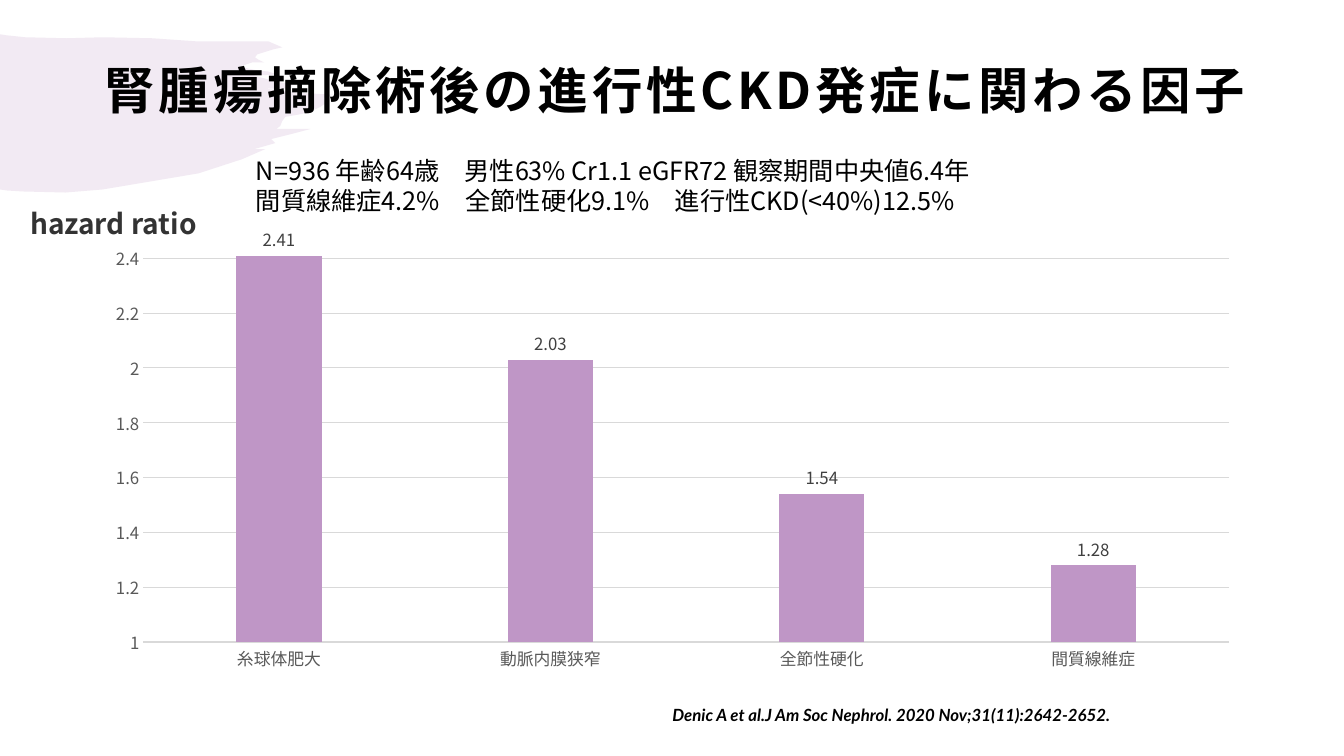
import dataclasses

import pptx
import pptx.chart.data
import pptx.dml.color
import pptx.enum.chart
import pptx.enum.text
import pptx.oxml
import pptx.oxml.ns
import pptx.util
from lxml import etree

Inches = pptx.util.Inches
Pt = pptx.util.Pt


@dataclasses.dataclass(frozen=True)
class Theme:
    """Colours, fonts and type sizes of the slide."""
    ink: str = "000000"
    heading: str = "333333"
    label: str = "404040"
    axis: str = "595959"
    grid: str = "D9D9D9"
    accent: str = "BF96C6"
    sans: str = "Noto Sans CJK JP"
    latin: str = "Lato"
    title: int = 36
    unit: int = 20
    body: int = 18
    small: int = 12


THEME = Theme()

BRUSH_EDGE = [
    (0, 0), (0.06, 0.01), (0.25, 0.03), (0.66, 0.04), (1.02, 0.03),
    (1.51, 0.04), (1.94, 0.07), (2.48, 0.07), (2.66, 0.07), (2.8, 0.13),
    (2.71, 0.15), (2.55, 0.2), (2.53, 0.23), (2.56, 0.25), (2.62, 0.28),
    (2.5, 0.28), (2.38, 0.32), (2.46, 0.34), (2.56, 0.36), (2.66, 0.37),
    (2.75, 0.4), (2.51, 0.41), (2.63, 0.44), (2.73, 0.47), (2.8, 0.48),
    (2.88, 0.49), (2.9, 0.51), (2.87, 0.54), (2.84, 0.54), (2.63, 0.54),
    (2.95, 0.58), (3.3, 0.6), (3.21, 0.63), (3.22, 0.69), (3.18, 0.72),
    (3.07, 0.77), (3, 0.79), (2.83, 0.82), (2.8, 0.86), (2.78, 0.91),
    (2.74, 0.94), (3.08, 0.94), (2.89, 0.99), (2.69, 1.04), (2.73, 1.08),
    (2.52, 1.14), (2.63, 1.14), (2.4, 1.24), (1.97, 1.38), (1.02, 1.54),
    (0.65, 1.57), (0.23, 1.56), (0.07, 1.55), (0, 1.54),
]


def rgb(code):
    """Return a colour from its hex code."""
    return pptx.dml.color.RGBColor.from_string(code)


def set_font(font, size, color, name=THEME.sans, bold=False, italic=False):
    """Format a font for both Latin and East Asian text."""
    font.size, font.bold, font.italic = Pt(size), bold, italic
    font.color.rgb = rgb(color)
    font.name = name
    ea = etree.SubElement(font._element, pptx.oxml.ns.qn("a:ea"))
    ea.set("typeface", name)


def add_text(s, box, text, size, color=THEME.ink, insets=(0.1, 0.05, 0.1, 0.05),
             anchor=pptx.enum.text.MSO_ANCHOR.TOP, line_spacing=None,
             tracking=None, **style):
    """Add a text box with one paragraph per line of text."""
    tf = s.shapes.add_textbox(*map(Inches, box)).text_frame
    tf.word_wrap = True
    tf.vertical_anchor = anchor
    tf.margin_left, tf.margin_top, tf.margin_right, tf.margin_bottom = map(Inches, insets)
    for i, line in enumerate(text.split("\n")):
        p = tf.paragraphs[0] if i == 0 else tf.add_paragraph()
        if line_spacing:
            p.line_spacing = line_spacing
        r = p.add_run()
        r.text = line
        set_font(r.font, size, color, **style)
        if tracking:
            r.font._element.set("spc", str(round(tracking * 100)))


def add_brush(s, left, top):
    """Draw the translucent brush stroke from its top left corner."""
    points = [(Inches(left + x), Inches(top + y)) for x, y in BRUSH_EDGE]
    builder = s.shapes.build_freeform(*points[0])
    builder.add_line_segments(points[1:], close=True)
    sp = builder.convert_to_shape()
    sp.shadow.inherit = False
    sp.line.fill.background()
    sp.fill.solid()
    sp.fill.fore_color.rgb = rgb(THEME.accent)
    color = sp.element.find(".//" + pptx.oxml.ns.qn("a:srgbClr"))
    etree.SubElement(color, pptx.oxml.ns.qn("a:alpha")).set("val", "20000")


def add_header(s, box):
    """Place the brush stroke, title and cohort summary."""
    left, top, width, height = box
    add_brush(s, left, top + 0.34)
    add_text(s, (left + 0.92, top + 0.4, width - 1.57, 0.9),
             "腎腫瘍摘除術後の進行性CKD発症に関わる因子", THEME.title,
             insets=(0.12, 0.12, 0.12, 0.1), line_spacing=1.1, tracking=2.7,
             anchor=pptx.enum.text.MSO_ANCHOR.MIDDLE, bold=True)
    add_text(s, (left + 2.44, top + height - 0.71, 8.71, 0.71),
             "N=936 年齢64歳　男性63% Cr1.1 eGFR72 観察期間中央値6.4年\n"
             "間質線維症4.2%　全節性硬化9.1%　進行性CKD(<40%)12.5%", THEME.body)


def add_hazard_chart(s, box):
    """Place the hazard ratio columns and their unit label."""
    left, top, width, height = box
    data = pptx.chart.data.CategoryChartData()
    data.categories = ["糸球体肥大", "動脈内膜狭窄", "全節性硬化", "間質線維症"]
    data.add_series("Series 1", (2.41, 2.03, 1.54, 1.28))
    chart = s.shapes.add_chart(pptx.enum.chart.XL_CHART_TYPE.COLUMN_CLUSTERED,
                               *map(Inches, box), data).chart
    chart.has_title = chart.has_legend = False
    set_font(chart.font, 10, THEME.ink)

    for axis in (chart.category_axis, chart.value_axis):
        axis.major_tick_mark = axis.minor_tick_mark = pptx.enum.chart.XL_TICK_MARK.NONE
        set_font(axis.tick_labels.font, THEME.small, THEME.axis)
    chart.value_axis.minimum_scale = 1
    chart.value_axis.maximum_scale = 2.5
    chart.value_axis.major_unit = 0.2
    chart.value_axis.format.line.fill.background()
    for line in (chart.category_axis.format.line,
                 chart.value_axis.major_gridlines.format.line):
        line.color.rgb = rgb(THEME.grid)
        line.width = Pt(0.75)

    plot = chart.plots[0]
    plot.vary_by_categories = False
    plot.gap_width, plot.overlap = 219, -27
    fill = plot.series[0].format.fill
    fill.solid()
    fill.fore_color.rgb = rgb(THEME.accent)
    plot.has_data_labels = True
    labels = plot.data_labels
    labels.show_value = True
    labels.position = pptx.enum.chart.XL_LABEL_POSITION.OUTSIDE_END
    set_font(labels.font, THEME.small, THEME.label)

    add_text(s, (left - 0.72, top - 0.2, 1.89, 0.44), "hazard ratio",
             THEME.unit, THEME.heading, bold=True)


def add_citation(s, box):
    """Place the source reference."""
    add_text(s, box, "Denic A et al.J Am Soc Nephrol. 2020 Nov;31(11):2642-2652.",
             THEME.small, name=THEME.latin, bold=True, italic=True)


def main():
    """Build and save the slide."""
    prs = pptx.Presentation()
    prs.slide_width, prs.slide_height = Inches(13.33), Inches(7.5)
    s = prs.slides.add_slide(prs.slide_layouts[6])
    add_header(s, (0, 0, 13.33, 2.2))
    add_hazard_chart(s, (0.92, 2.2, 11.5, 4.55))
    add_citation(s, (6.57, 6.94, 5.31, 0.3))
    prs.save("out.pptx")


if __name__ == "__main__":
    main()
